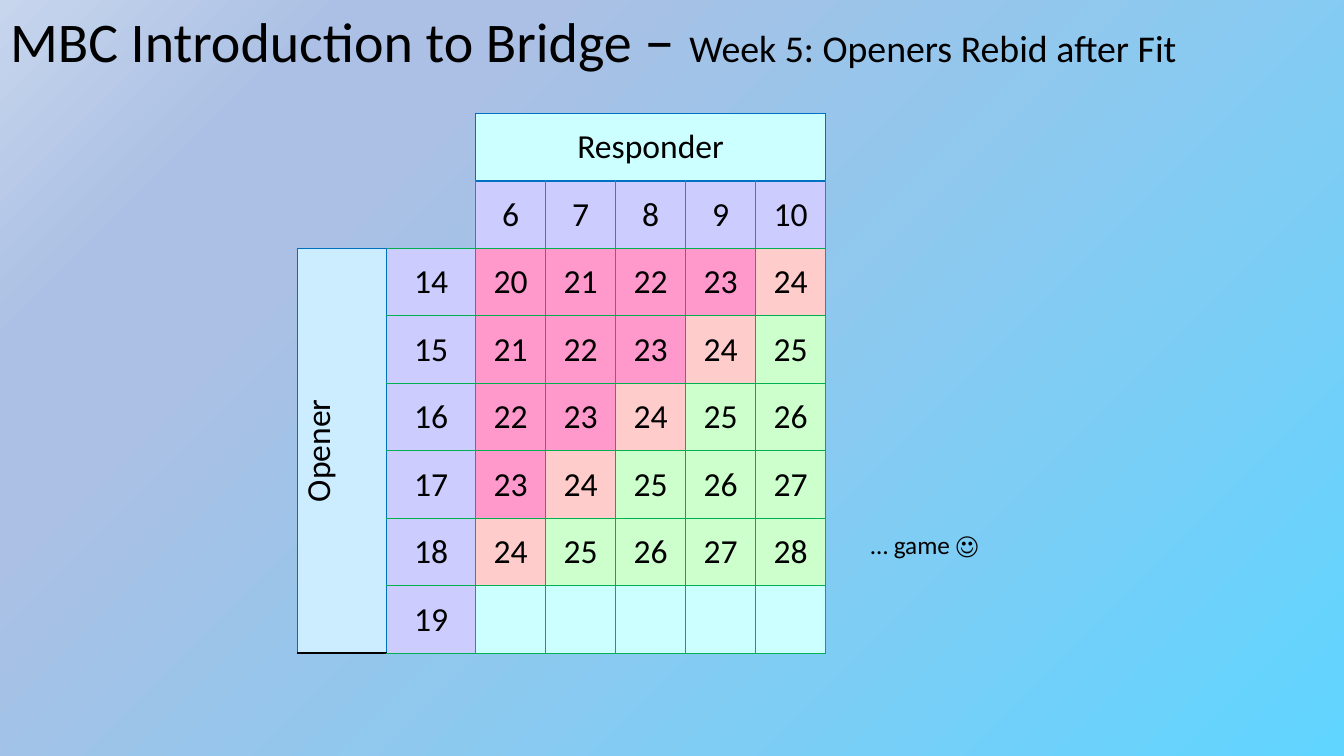
import pptx
import pptx.dml.color
import pptx.enum.text
import pptx.oxml
import pptx.oxml.ns
import pptx.util

Pt = pptx.util.Pt
RGBColor = pptx.dml.color.RGBColor
PP_ALIGN = pptx.enum.text.PP_ALIGN
MSO_ANCHOR = pptx.enum.text.MSO_ANCHOR

BLACK = RGBColor(0x00, 0x00, 0x00)
BLUE = RGBColor(0x00, 0x70, 0xC0)
GREEN = RGBColor(0x00, 0xB0, 0x50)
RESPONDER_FILL = RGBColor(0xCC, 0xFF, 0xFF)
OPENER_FILL = RGBColor(0xCC, 0xEC, 0xFF)
POINTS_FILL = RGBColor(0xCC, 0xCC, 0xFF)
PASS_FILL = RGBColor(0xFF, 0x99, 0xCC)
INVITE_FILL = RGBColor(0xFF, 0xCC, 0xCC)
GAME_FILL = RGBColor(0xCC, 0xFF, 0xCC)
SKY = RGBColor(0x60, 0xD5, 0xFF)
LAVENDER = RGBColor(0xAB, 0xC0, 0xE4)
MIST = RGBColor(0xC7, 0xD5, 0xED)

FONT = "Calibri"
INVITE_TOTAL = 24
NO_GRID_STYLE = "{2D5ABB26-0587-4C30-8999-92F81FD0307C}"
BACKGROUND_STOPS = [(0, SKY), (74, LAVENDER), (83, LAVENDER), (100, MIST)]
RESPONDER_POINTS = range(6, 11)
OPENER_POINTS = range(14, 20)

GRID_BORDERS = {"L": (GREEN, 1), "R": (GREEN, 1), "T": (GREEN, 0.5), "B": (GREEN, 0.5)}
RESPONDER_BORDERS = {"L": (BLUE, 0.5), "R": (BLUE, 0.5), "T": (BLUE, 0.5), "B": (BLUE, 1.5)}
OPENER_BORDERS = {"L": (BLUE, 0.5), "R": (BLUE, 1.5), "T": (BLUE, 0.5), "B": (BLACK, 1.5)}
CELL_FORMAT = {
    "vertical_anchor": MSO_ANCHOR.MIDDLE,
    "margin_left": Pt(0.7),
    "margin_right": Pt(0.7),
    "margin_top": Pt(0.7),
    "margin_bottom": 0,
}


def set_attributes(target, values):
    for name, value in values.items():
        setattr(target, name, value)


def add_run(paragraph, text, size):
    run = paragraph.add_run()
    run.text = text
    set_attributes(run.font, {"name": FONT, "size": Pt(size)})
    run.font.color.rgb = BLACK


def fill_background(slide):
    slide.background.fill.gradient()
    gradient = slide.element.find(".//" + pptx.oxml.ns.qn("a:gradFill"))
    stops = "".join(
        f'<a:gs pos="{position * 1000}"><a:srgbClr val="{color}"/></a:gs>'
        for position, color in BACKGROUND_STOPS
    )
    gradient.getparent().replace(gradient, pptx.oxml.parse_xml(
        f'<a:gradFill {pptx.oxml.ns.nsdecls("a")} rotWithShape="1"><a:gsLst>{stops}</a:gsLst>'
        '<a:path path="circle"><a:fillToRect l="100000" t="100000"/></a:path>'
        '<a:tileRect r="-100000" b="-100000"/></a:gradFill>'
    ))


def format_title(slide, parts):
    title = slide.shapes.title
    set_attributes(title, {"left": 0, "top": 0, "width": Pt(960), "height": Pt(60.5)})
    frame = title.text_frame
    set_attributes(frame, {
        "vertical_anchor": MSO_ANCHOR.MIDDLE,
        "auto_size": pptx.enum.text.MSO_AUTO_SIZE.NONE,
    })
    paragraph = frame.paragraphs[0]
    set_attributes(paragraph, {"alignment": PP_ALIGN.LEFT, "line_spacing": 0.9})
    for text, size in parts:
        add_run(paragraph, text, size)


def set_borders(cell, borders):
    properties = cell._tc.get_or_add_tcPr()
    for side in "LRTB":
        if side in borders:
            color, width = borders[side]
            properties.append(pptx.oxml.parse_xml(
                f'<a:ln{side} {pptx.oxml.ns.nsdecls("a")} w="{Pt(width)}">'
                f'<a:solidFill><a:srgbClr val="{color}"/></a:solidFill></a:ln{side}>'
            ))


def format_cell(cell, text, fill, borders):
    set_borders(cell, borders)
    cell.fill.solid()
    cell.fill.fore_color.rgb = fill
    set_attributes(cell, CELL_FORMAT)
    paragraph = cell.text_frame.paragraphs[0]
    paragraph.alignment = PP_ALIGN.CENTER
    if text:
        add_run(paragraph, text, 24)


def total_fill(total):
    if total < INVITE_TOTAL:
        return PASS_FILL
    return INVITE_FILL if total == INVITE_TOTAL else GAME_FILL


def add_points_table(slide):
    frame = slide.shapes.add_table(8, 7, Pt(212.4), Pt(80.8), Pt(377.4), Pt(385.92))
    table = frame.table
    set_attributes(table, {"first_row": False, "horz_banding": False})
    frame._element.find(".//" + pptx.oxml.ns.qn("a:tableStyleId")).text = NO_GRID_STYLE
    for index, column in enumerate(table.columns):
        column.width = Pt(63.7 if index < 2 else 50)
    for row in table.rows:
        row.height = Pt(48.24)

    responder = table.cell(0, 2)
    responder.merge(table.cell(0, 6))
    format_cell(responder, "Responder", RESPONDER_FILL, RESPONDER_BORDERS)
    opener = table.cell(2, 0)
    opener.merge(table.cell(7, 0))
    format_cell(opener, "Opener", OPENER_FILL, OPENER_BORDERS)
    opener._tc.get_or_add_tcPr().set("vert", "vert270")

    for column, points in enumerate(RESPONDER_POINTS, 2):
        format_cell(table.cell(1, column), str(points), POINTS_FILL,
                    {**GRID_BORDERS, "T": (BLUE, 1.5)})
    for row, opener_points in enumerate(OPENER_POINTS, 2):
        format_cell(table.cell(row, 1), str(opener_points), POINTS_FILL,
                    {**GRID_BORDERS, "L": (BLUE, 1.5)})
        for column, responder_points in enumerate(RESPONDER_POINTS, 2):
            total = opener_points + responder_points
            blank = opener_points == OPENER_POINTS[-1]
            format_cell(table.cell(row, column), "" if blank else str(total),
                        RESPONDER_FILL if blank else total_fill(total), GRID_BORDERS)


def add_note(slide, text):
    box = slide.shapes.add_textbox(Pt(614.9), Pt(374.4), Pt(91.4), Pt(29))
    box.text_frame.word_wrap = True
    add_run(box.text_frame.paragraphs[0], text, 18)


def main():
    presentation = pptx.Presentation()
    set_attributes(presentation, {"slide_width": Pt(960), "slide_height": Pt(540)})
    slide = presentation.slides.add_slide(presentation.slide_layouts[5])
    fill_background(slide)
    format_title(slide, [
        ("MBC Introduction to Bridge ", 40),
        ("– ", 44),
        ("Week 5: Openers Rebid after Fit", 27),
    ])
    add_points_table(slide)
    add_note(slide, "… game ☺")
    presentation.save("out.pptx")


if __name__ == "__main__":
    main()
